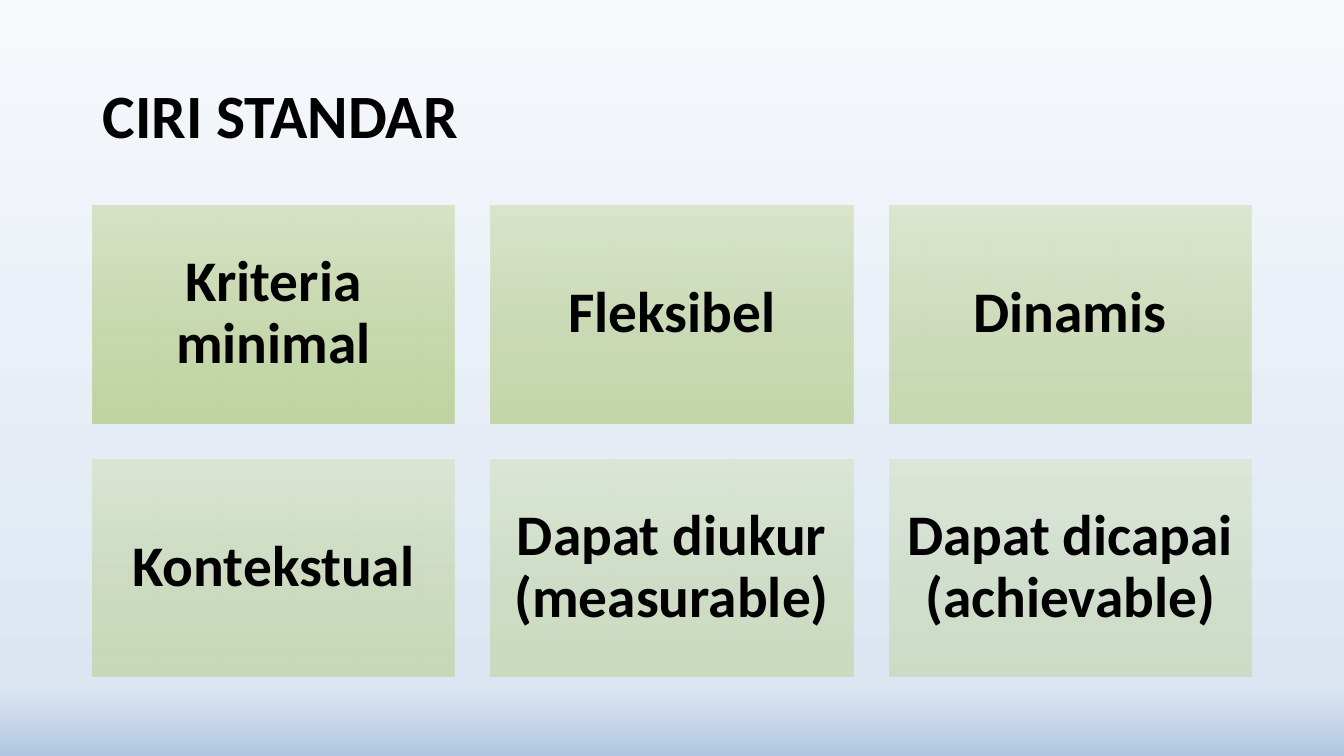
"""Build the slide "CIRI STANDAR": a title above a grid of six fading boxes."""
from lxml import etree
from pptx import Presentation
from pptx import util as u
from pptx.dml.color import RGBColor
from pptx.enum import shapes, text
from pptx.oxml import ns

BLACK = RGBColor(0x00, 0x00, 0x00)
SKY = [(0, RGBColor(0xF6, 0xF9, 0xFC)), (91, RGBColor(0xDC, 0xE6, 0xF2)),
       (100, RGBColor(0xB0, 0xC6, 0xE1))]
GREEN = [(0, RGBColor(0xD5, 0xE2, 0xC2)), (50, RGBColor(0xC6, 0xD7, 0xAA)),
         (100, RGBColor(0xBC, 0xD2, 0x98))]
TRAITS = ["Kriteria minimal", "Fleksibel", "Dinamis", "Kontekstual",
          "Dapat diukur (measurable)", "Dapat dicapai (achievable)"]
COLS = 3
LEFT, TOP, WIDTH, HEIGHT = 2.33, 5.18, 9.13, 5.48
STEP_X, STEP_Y = 10.04, 6.4
INSET = u.Cm(0.43)


def set_gradient(fill, root, stops, alpha=100):
    fill.gradient()
    fill.gradient_angle = 270
    gs_list = next(root.iter(ns.qn("a:gsLst")))
    gs_list.clear()
    for pos, color in stops:
        gs = etree.SubElement(gs_list, ns.qn("a:gs"), pos=str(pos * 1000))
        clr = etree.SubElement(gs, ns.qn("a:srgbClr"), val=str(color))
        if alpha < 100:
            etree.SubElement(clr, ns.qn("a:alpha"), val=str(alpha * 1000))


def write(tf, words, size, align):
    tf.text = words
    frame = {"word_wrap": True, "auto_size": text.MSO_AUTO_SIZE.NONE,
             "vertical_anchor": text.MSO_ANCHOR.MIDDLE}
    p = tf.paragraphs[0]
    para = {"alignment": align, "line_spacing": 0.9}
    font = {"name": "Calibri", "size": u.Pt(size), "bold": True}
    r = p.runs[0]
    for obj, values in ((tf, frame), (p, para), (r.font, font)):
        for name, value in values.items():
            setattr(obj, name, value)
    r.font.color.rgb = BLACK


prs = Presentation()
prs.slide_width, prs.slide_height = u.Cm(33.87), u.Cm(19.05)
s = prs.slides.add_slide(prs.slide_layouts[5])
set_gradient(s.background.fill, s._element, SKY)

title = s.shapes.title
title.left, title.top = u.Cm(LEFT), u.Cm(1.14)
title.width, title.height = u.Cm(29.23), u.Cm(3.68)
write(title.text_frame, "CIRI STANDAR", 44, text.PP_ALIGN.LEFT)

for i, trait in enumerate(TRAITS):
    row, col = divmod(i, COLS)
    sp = s.shapes.add_shape(
        shapes.MSO_SHAPE.RECTANGLE, u.Cm(LEFT + col * STEP_X),
        u.Cm(TOP + row * STEP_Y), u.Cm(WIDTH), u.Cm(HEIGHT))
    sp.shadow.inherit = False
    sp.line.fill.background()
    set_gradient(sp.fill, sp._element, GREEN, 90 - 8 * i)
    tf = sp.text_frame
    for side in ("left", "top", "right", "bottom"):
        setattr(tf, f"margin_{side}", INSET)
    write(tf, trait, 41, text.PP_ALIGN.CENTER)

prs.save("out.pptx")
